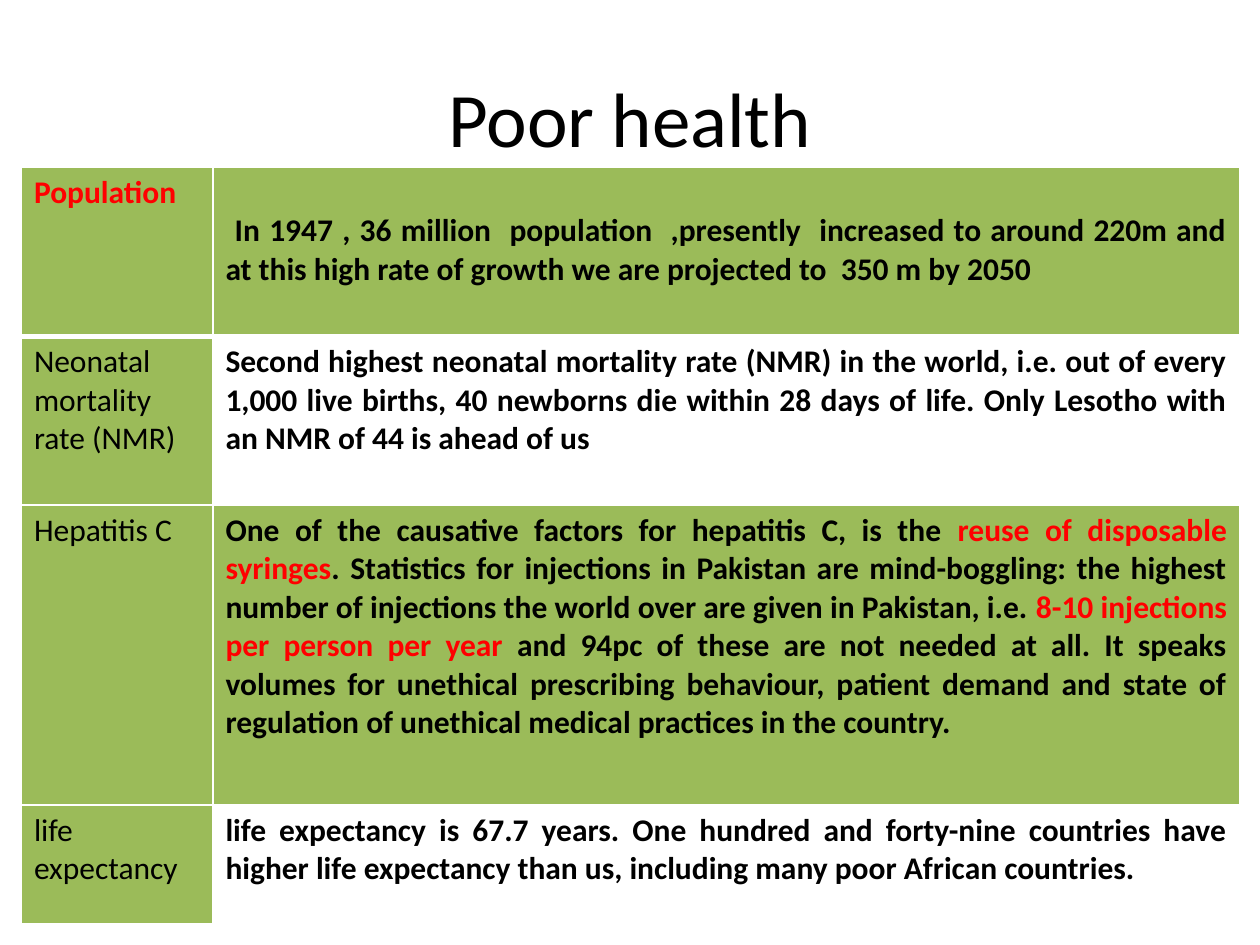
from lxml.etree import SubElement
from pptx import Presentation
from pptx.dml.color import RGBColor
from pptx.enum.text import MSO_ANCHOR, PP_ALIGN
from pptx.oxml.ns import qn
from pptx.util import Inches, Pt

BLACK = RGBColor(0x00, 0x00, 0x00)
RED = RGBColor(0xFF, 0x00, 0x00)
GREEN = RGBColor(0x9B, 0xBB, 0x59)
WHITE = RGBColor(0xFF, 0xFF, 0xFF)
FONT = "Calibri"

COL_WIDTHS = (1.52, 8.15)
ROW_HEIGHTS = (1.34, 1.34, 2.38, 0.94)
ROWS = [
    ("Population", [
        (" In 1947 , 36 million  population  ,presently  increased to around 220m "
         "and at this high rate of growth we are projected to  350 m by 2050", BLACK)]),
    ("Neonatal mortality rate (NMR)", [
        ("Second highest neonatal mortality rate (NMR) in the world, i.e. out of every "
         "1,000 live births, 40 newborns die within 28 days of life. Only Lesotho with "
         "an NMR of 44 is ahead of us", BLACK)]),
    ("Hepatitis C", [
        ("One of the causative factors for hepatitis C, is the ", BLACK),
        ("reuse of disposable syringes", RED),
        (". Statistics for injections in Pakistan are mind-boggling: the highest number "
         "of injections the world over are given in Pakistan, i.e. ", BLACK),
        ("8-10 injections per person per year", RED),
        (" and 94pc of these are not needed at all. It speaks volumes for unethical "
         "prescribing behaviour, patient demand and state of regulation of unethical "
         "medical practices in the country.", BLACK)]),
    ("life expectancy", [
        ("life expectancy is 67.7 years. One hundred and forty-nine countries have "
         "higher life expectancy than us, including many poor African countries.", BLACK)]),
]


def add_text(tf, runs, size=18, bold=False, align=PP_ALIGN.LEFT):
    p = tf.paragraphs[0]
    p.alignment = align
    for text, color in runs:
        r = p.add_run()
        r.text = text
        r.font.name = FONT
        r.font.size = Pt(size)
        r.font.bold = bold
        r.font.color.rgb = color


def set_borders(cell, top=1, bottom=1):
    tc_pr = cell._tc.get_or_add_tcPr()
    for side, width in (("L", 1), ("R", 1), ("T", top), ("B", bottom)):
        ln = SubElement(tc_pr, qn(f"a:ln{side}"), w=str(Pt(width)))
        fill = SubElement(ln, qn("a:solidFill"))
        SubElement(fill, qn("a:srgbClr"), val=str(WHITE))


def set_fill(cell, color):
    cell.fill.solid()
    cell.fill.fore_color.rgb = color


def add_title(slide, left, top, width, height):
    title = slide.shapes.title
    title.left, title.top, title.width, title.height = left, top, width, height
    title.text_frame.vertical_anchor = MSO_ANCHOR.MIDDLE
    add_text(title.text_frame, [("Poor health", BLACK)], size=44, align=PP_ALIGN.CENTER)


def add_health_table(slide, left, top, width, height):
    table = slide.shapes.add_table(len(ROWS), 2, left, top, width, height).table
    for column, w in zip(table.columns, COL_WIDTHS):
        column.width = Inches(w)
    for i, (label, runs) in enumerate(ROWS):
        table.rows[i].height = Inches(ROW_HEIGHTS[i])
        is_header = i == 0
        label_cell, fact_cell = table.cell(i, 0), table.cell(i, 1)
        for cell in (label_cell, fact_cell):
            set_borders(cell, top=3 if i == 1 else 1, bottom=3 if is_header else 1)
        set_fill(label_cell, GREEN)
        set_fill(fact_cell, WHITE if i % 2 else GREEN)
        add_text(label_cell.text_frame, [(label, RED if is_header else BLACK)],
                 bold=is_header)
        add_text(fact_cell.text_frame, runs, bold=True, align=PP_ALIGN.JUSTIFY)
        if is_header:
            fact_cell.margin_top = Inches(0.35)


def main():
    prs = Presentation()
    prs.slide_width, prs.slide_height = Inches(10), Inches(7.5)
    slide = prs.slides.add_slide(prs.slide_layouts[5])
    add_title(slide, Inches(0.5), Inches(0.3), Inches(9), Inches(1.25))
    add_health_table(slide, Inches(0.17), Inches(1.33), Inches(9.67), Inches(6))
    prs.save("out.pptx")


if __name__ == "__main__":
    main()
